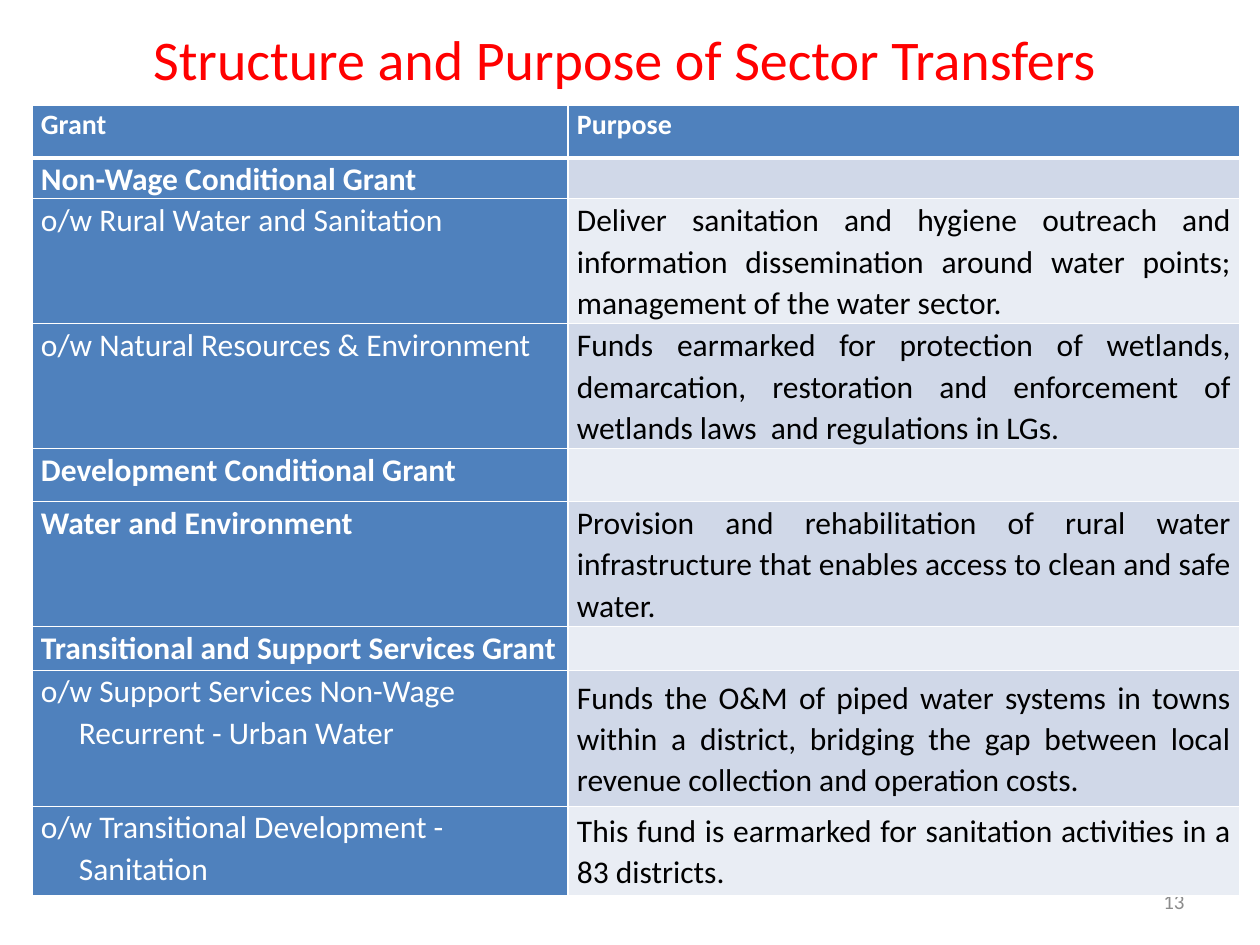
from lxml import etree
from pptx import Presentation
from pptx.dml.color import RGBColor
from pptx.enum.text import MSO_ANCHOR, PP_ALIGN
from pptx.oxml.ns import qn
from pptx.util import Pt

LEFT, CENTER, RIGHT, JUSTIFY = PP_ALIGN.LEFT, PP_ALIGN.CENTER, PP_ALIGN.RIGHT, PP_ALIGN.JUSTIFY
TOP, MIDDLE = MSO_ANCHOR.TOP, MSO_ANCHOR.MIDDLE

RED = RGBColor(0xFF, 0x00, 0x00)
WHITE = RGBColor(0xFF, 0xFF, 0xFF)
BLACK = RGBColor(0x00, 0x00, 0x00)
GRAY = RGBColor(0x8C, 0x8C, 0x8C)
BLUE = RGBColor(0x4F, 0x81, 0xBD)
BANDS = (RGBColor(0xE9, 0xED, 0xF4), RGBColor(0xD0, 0xD8, 0xE8))

FONT = "Calibri"
TITLE = "Structure and Purpose of Sector Transfers"
PAGE_NUMBER = "13"

# Row height, grant, purpose
ROWS = [
    (53, "Grant", "Purpose"),
    (40, "Non-Wage Conditional Grant", ""),
    (125, "o/w Rural Water and Sanitation",
     "Deliver sanitation and hygiene outreach and information dissemination "
     "around water points; management of the water sector."),
    (125, "o/w Natural Resources & Environment",
     "Funds earmarked for protection of wetlands, demarcation, restoration and "
     "enforcement of wetlands laws  and regulations in LGs."),
    (53, "Development Conditional Grant", ""),
    (125, "Water and Environment",
     "Provision and rehabilitation of rural water infrastructure that enables "
     "access to clean and safe water."),
    (44, "Transitional and Support Services Grant", ""),
    (136, "o/w Support Services Non-Wage Recurrent - Urban Water",
     "Funds the O&M of piped water systems in towns within a district, bridging "
     "the gap between local revenue collection and operation costs."),
    (90, "o/w Transitional Development - Sanitation",
     "This fund is earmarked for sanitation activities in a 83 districts. "),
]
COLUMN_WIDTHS = (536, 672)
TABLE_LEFT, TABLE_TOP = 32, 105
HANGING_INDENT = 38
CELL_MARGIN = 9


def px(value):
    return round(value * 914400 / 126)


def style(paragraph, size, color, bold=False, align=LEFT):
    paragraph.alignment = align
    font = paragraph.font
    font.name, font.size, font.bold = FONT, Pt(size), bold
    font.color.rgb = color


def add_text(slide, text, box, size, color, align):
    shape = slide.shapes.add_textbox(*map(px, box))
    frame = shape.text_frame
    frame.word_wrap = True
    frame.vertical_anchor = MIDDLE
    frame.text = text
    style(frame.paragraphs[0], size, color, align=align)


def set_borders(cell, widths):
    """Draw white borders; widths are points for left, right, top, bottom."""
    properties = cell._tc.get_or_add_tcPr()
    for index, (side, width) in enumerate(zip("LRTB", widths)):
        line = etree.Element(qn(f"a:ln{side}"), w=str(Pt(width)))
        fill = etree.SubElement(line, qn("a:solidFill"))
        etree.SubElement(fill, qn("a:srgbClr"), val=str(WHITE))
        properties.insert(index, line)


def fill_cell(cell, text, row, column):
    header = row == 0
    is_label = header or column == 0
    is_subgrant = text.startswith("o/w")
    cell.margin_left = cell.margin_right = px(CELL_MARGIN)
    cell.margin_top = cell.margin_bottom = 0
    cell.vertical_anchor = TOP if is_label else MIDDLE
    cell.fill.solid()
    cell.fill.fore_color.rgb = BLUE if is_label else BANDS[row % 2]
    set_borders(cell, (1, 1, 3 if row == 1 else 1, 3 if header else 1))

    cell.text = text
    paragraph = cell.text_frame.paragraphs[0]
    paragraph.line_spacing = 1.07
    style(paragraph, 16 if header else 18, WHITE if is_label else BLACK,
          bold=is_label and not is_subgrant, align=LEFT if is_label else JUSTIFY)
    if is_subgrant:
        paragraph_properties = paragraph._p.get_or_add_pPr()
        paragraph_properties.set("marL", str(px(HANGING_INDENT)))
        paragraph_properties.set("indent", str(-px(HANGING_INDENT)))


def add_grant_table(slide):
    heights = [row[0] for row in ROWS]
    table = slide.shapes.add_table(
        len(ROWS), len(COLUMN_WIDTHS), px(TABLE_LEFT), px(TABLE_TOP),
        px(sum(COLUMN_WIDTHS)), px(sum(heights))).table
    for column, width in zip(table.columns, COLUMN_WIDTHS):
        column.width = px(width)
    for row, (height, *texts) in enumerate(ROWS):
        table.rows[row].height = px(height)
        for column, text in enumerate(texts):
            fill_cell(table.cell(row, column), text, row, column)


def main():
    presentation = Presentation()
    presentation.slide_width, presentation.slide_height = px(1260), px(945)
    slide = presentation.slides.add_slide(presentation.slide_layouts[6])

    # Title and page number sit behind the table
    add_text(slide, TITLE, (0, 0, 1250, 116), 32, RED, CENTER)
    add_text(slide, PAGE_NUMBER, (903, 876, 294, 50), 12, GRAY, RIGHT)
    add_grant_table(slide)

    presentation.save("out.pptx")


if __name__ == "__main__":
    main()
